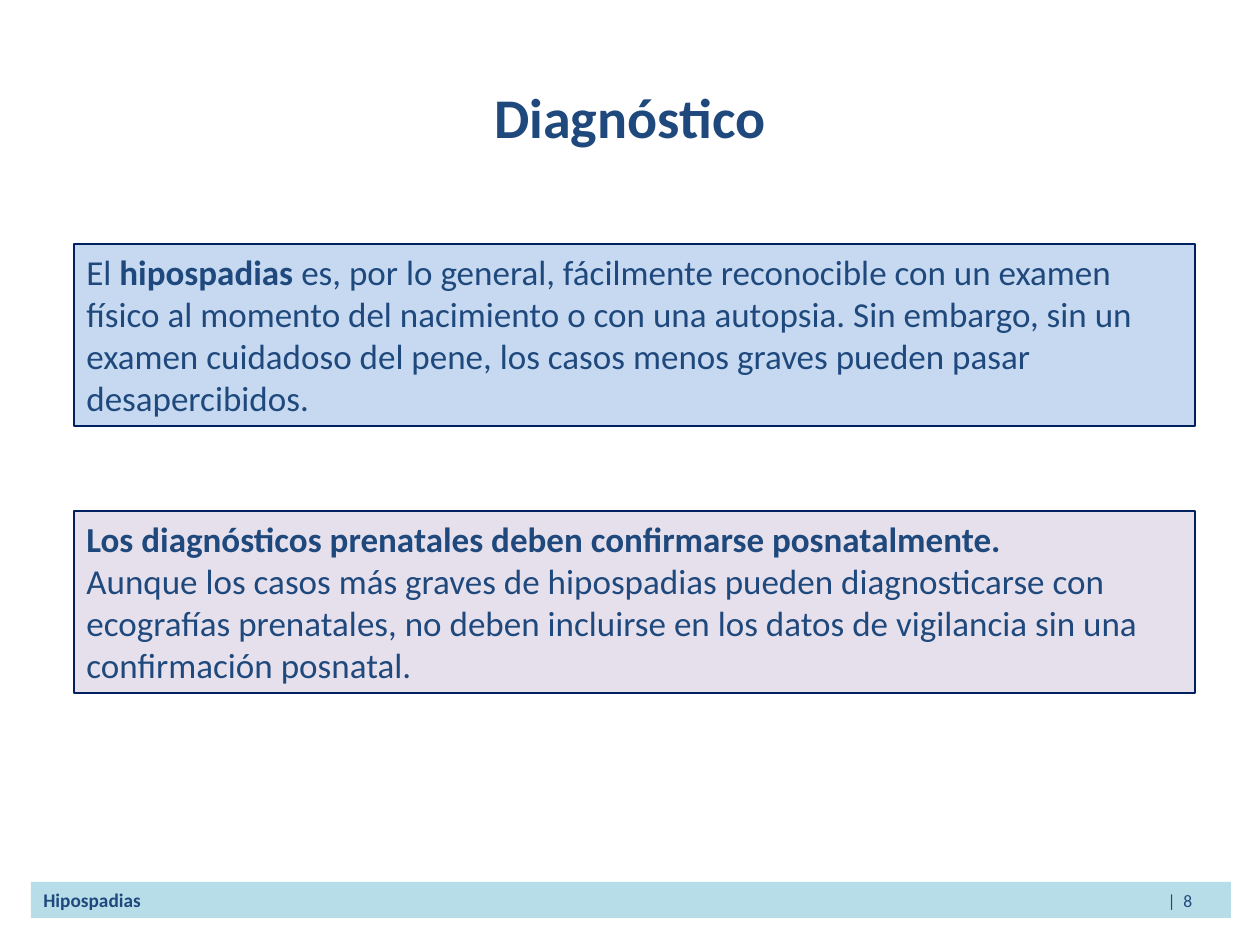
"""Build the slide on the diagnosis of hypospadias."""
import lxml.etree
import pptx
import pptx.dml.color
import pptx.enum.shapes
import pptx.enum.text
import pptx.oxml.ns
import pptx.util

PX_PER_INCH = 126
NAVY = pptx.dml.color.RGBColor(0x1F, 0x49, 0x7D)
OUTLINE = pptx.dml.color.RGBColor(0x00, 0x20, 0x60)
AQUA = pptx.dml.color.RGBColor(0xB7, 0xDE, 0xE8)
BLUE = pptx.dml.color.RGBColor(0xC6, 0xD9, 0xF1)
LILAC = pptx.dml.color.RGBColor(0xE6, 0xE0, 0xEC)
LEFT = pptx.enum.text.PP_ALIGN.LEFT
CENTER = pptx.enum.text.PP_ALIGN.CENTER
TOP = pptx.enum.text.MSO_ANCHOR.TOP
MIDDLE = pptx.enum.text.MSO_ANCHOR.MIDDLE


def px(length):
    return pptx.util.Emu(round(length * 914400 / PX_PER_INCH))


def add_run(paragraph, text, size=20, bold=False, color=NAVY, font="Calibri"):
    run = paragraph.add_run()
    run.text = text
    run.font.name = font
    run.font.size = pptx.util.Pt(size)
    run.font.bold = bold
    run.font.color.rgb = color


class SlideBuilder:
    def __init__(self, slide, outline=OUTLINE):
        self.slide = slide
        self.outline = outline

    def fill_text(self, shape, paragraphs, align=LEFT, anchor=TOP):
        frame = shape.text_frame
        frame.word_wrap = True
        frame.vertical_anchor = anchor
        for index, runs in enumerate(paragraphs):
            paragraph = frame.paragraphs[0] if index == 0 else frame.add_paragraph()
            paragraph.alignment = align
            for text, style in runs:
                add_run(paragraph, text, **style)

    def title(self, left, top, width, height, text):
        heading = self.slide.shapes.add_textbox(px(left), px(top), px(width), px(height))
        self.fill_text(heading, [[(text, {"size": 32, "bold": True})]], CENTER, MIDDLE)

    def panel(self, left, top, width, height, fill, paragraphs, outlined=True):
        panel = self.slide.shapes.add_shape(
            pptx.enum.shapes.MSO_SHAPE.RECTANGLE, px(left), px(top), px(width), px(height))
        panel.shadow.inherit = False
        panel.fill.solid()
        panel.fill.fore_color.rgb = fill
        if outlined:
            panel.line.color.rgb = self.outline
            panel.line.width = pptx.util.Pt(0.75)
        else:
            panel.line.fill.background()
        self.fill_text(panel, paragraphs)
        return panel

    def footer(self, left, top, width, height, topic, page, tab):
        runs = [(topic + "\t", {"size": 11, "bold": True}), (page, {"size": 10})]
        bar = self.panel(left, top, width, height, AQUA, [runs], outlined=False)
        properties = bar.text_frame.paragraphs[0]._p.get_or_add_pPr()
        tabs = lxml.etree.SubElement(properties, pptx.oxml.ns.qn("a:tabLst"))
        lxml.etree.SubElement(tabs, pptx.oxml.ns.qn("a:tab"), pos=str(px(tab)), algn="r")


def main():
    deck = pptx.Presentation()
    deck.slide_width = px(1260)
    deck.slide_height = px(945)
    builder = SlideBuilder(deck.slides.add_slide(deck.slide_layouts[6]))
    builder.footer(31, 882, 1200, 36, "Hipospadias", "|  8", tab=1149)
    builder.title(63, 38, 1134, 157, "Diagnóstico")

    recognition = [[
        ("El ", {}),
        ("hipospadias", {"bold": True}),
        (" es, por lo general, fácilmente reconocible con un examen físico al momento del "
         "nacimiento o con una autopsia. Sin embargo, sin un examen cuidadoso del pene, los "
         "casos menos graves pueden pasar desapercibidos.", {}),
    ]]
    confirmation = [
        [("Los diagnósticos prenatales deben confirmarse posnatalmente.", {"bold": True})],
        [("Aunque los casos más graves de hipospadias pueden diagnosticarse con ecografías "
          "prenatales, no deben incluirse en los datos de vigilancia sin una confirmación "
          "posnatal.", {})],
    ]
    for row, (fill, message) in enumerate([(BLUE, recognition), (LILAC, confirmation)]):
        builder.panel(74, 244 + 267 * row, 1121, 182, fill, message)
    deck.save("out.pptx")


if __name__ == "__main__":
    main()
